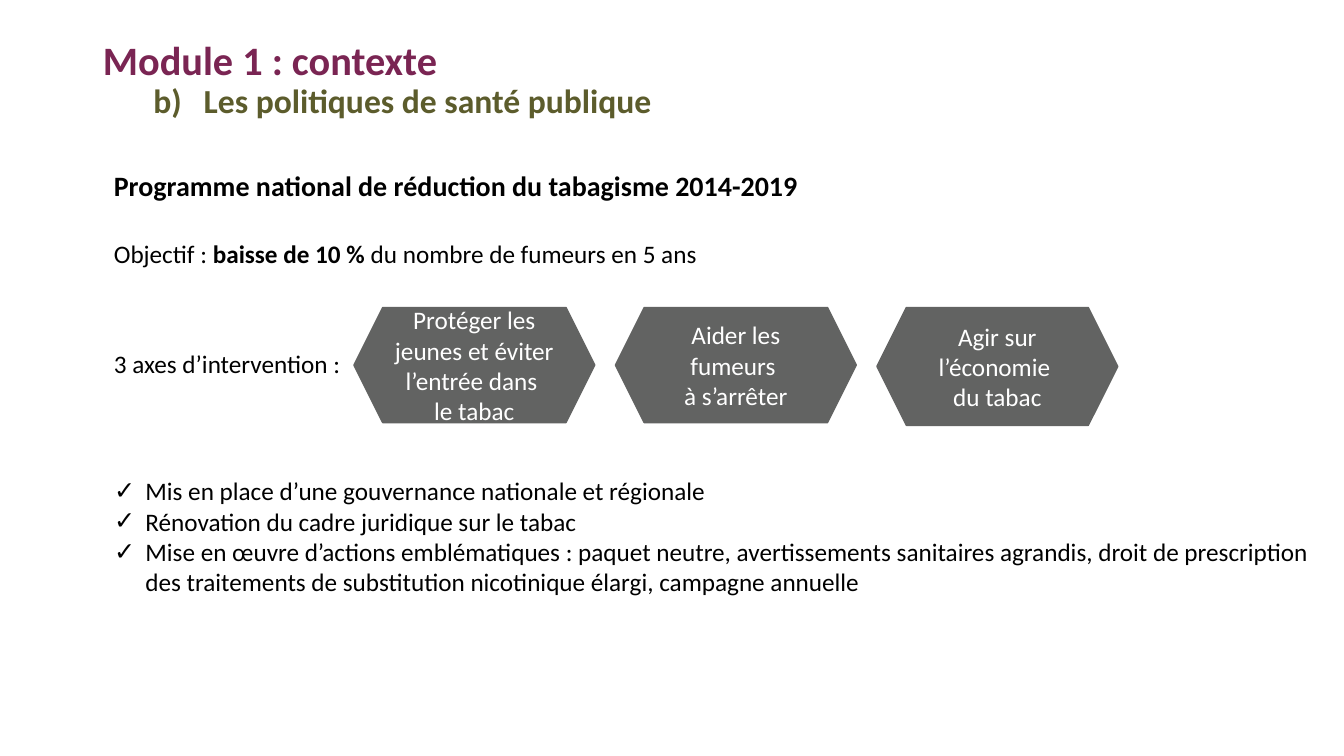
from dataclasses import dataclass

from lxml import etree
from pptx import Presentation
from pptx import util as u
from pptx.dml.color import RGBColor
from pptx.enum import shapes, text
from pptx.oxml import ns

TITLE = "Module 1 : contexte"
SUBTITLE = "Les politiques de santé publique"
PROGRAMME = "Programme national de réduction du tabagisme 2014-2019"
OBJECTIVE = [
    ("Objectif : ", False),
    ("baisse de 10 % ", True),
    ("du nombre de fumeurs en 5 ans", False),
]
AXES_LABEL = "3 axes d’intervention :"
AXES = [  # wording, height in cm
    ("Protéger les jeunes et éviter l’entrée dans \vle tabac", 2.9),
    ("Aider les fumeurs \và s’arrêter", 2.9),
    ("Agir sur l’économie \vdu tabac", 2.97),
]
ACTIONS = [
    "Mis en place d’une gouvernance nationale et régionale",
    "Rénovation du cadre juridique sur le tabac",
    "Mise en œuvre d’actions emblématiques : paquet neutre, avertissements "
    "sanitaires agrandis, droit de prescription des traitements de "
    "substitution nicotinique élargi, campagne annuelle",
]


@dataclass(frozen=True)
class Theme:
    font: str = "Calibri"
    plum: str = "7A2553"
    olive: str = "5C5C2C"
    grey: str = "626362"
    black: str = "000000"
    white: str = "FFFFFF"
    title: float = 28.8
    subtitle: float = 24
    heading: float = 20
    body: float = 18


THEME = Theme()
LEFT = 2.62
AXIS_LEFT, AXIS_TOP, AXIS_WIDTH, AXIS_STEP = 8.92, 7.75, 6.07, 6.59


def place(shape, left, top, width, height):
    shape.left, shape.top = u.Cm(left), u.Cm(top)
    shape.width, shape.height = u.Cm(width), u.Cm(height)


def write(shape, paragraphs, size, color, bold=False, align=text.PP_ALIGN.LEFT,
          anchor=text.MSO_ANCHOR.TOP, spacing=1.0):
    """Fill a shape; a paragraph is a string or a list of (words, bold) pairs."""
    frame = shape.text_frame
    frame.word_wrap = True
    frame.auto_size = text.MSO_AUTO_SIZE.NONE
    frame.vertical_anchor = anchor
    for index, content in enumerate(paragraphs):
        para = frame.add_paragraph() if index else frame.paragraphs[0]
        para.alignment = align
        para.line_spacing = spacing
        para.space_before = para.space_after = u.Pt(0)
        if isinstance(content, str):
            para.text = content
            weights = [bold] * len(para.runs)
        else:
            for words, _ in content:
                para.add_run().text = words
            weights = [weight for _, weight in content]
        for span, weight in zip(para.runs, weights):
            span.font.name = THEME.font
            span.font.size = u.Pt(size)
            span.font.bold = weight
            span.font.color.rgb = RGBColor.from_string(color)


def add_marker(para, margin, hanging, tag, **attributes):
    """Give a paragraph a bullet or number with a hanging indent in cm."""
    props = para._p.get_or_add_pPr()
    props.set("marL", str(u.Cm(margin)))
    props.set("indent", str(-u.Cm(hanging)))
    marker = etree.SubElement(props, ns.qn(tag))
    for name, value in attributes.items():
        marker.set(name, value)


def add_text(page, box, paragraphs, size, **style):
    label = page.shapes.add_textbox(*map(u.Cm, box))
    write(label, paragraphs, size, THEME.black, **style)


def add_axis(page, index, words, height):
    left = AXIS_LEFT + index * AXIS_STEP
    hexagon = page.shapes.add_shape(
        shapes.MSO_SHAPE.HEXAGON,
        *map(u.Cm, (left, AXIS_TOP, AXIS_WIDTH, height)))
    hexagon.shadow.inherit = False
    hexagon.fill.solid()
    hexagon.fill.fore_color.rgb = RGBColor.from_string(THEME.grey)
    hexagon.line.color.rgb = RGBColor.from_string(THEME.grey)
    hexagon.line.width = u.Pt(1)
    write(hexagon, [words], THEME.body, THEME.white,
          align=text.PP_ALIGN.CENTER, anchor=text.MSO_ANCHOR.MIDDLE)


def main():
    deck = Presentation()
    deck.slide_width, deck.slide_height = u.Cm(33.87), u.Cm(19.05)
    page = deck.slides.add_slide(deck.slide_layouts.get_by_name("Two Content"))
    title, subtitle, actions = list(page.placeholders)[:3]

    place(title, 2.34, 1.02, 29.21, 1.24)
    write(title, [TITLE], THEME.title, THEME.plum, bold=True,
          anchor=text.MSO_ANCHOR.MIDDLE, spacing=0.7)

    place(subtitle, LEFT, 2, 29.21, 1.8)
    write(subtitle, [SUBTITLE], THEME.subtitle, THEME.olive, bold=True, spacing=0.9)
    add_marker(subtitle.text_frame.paragraphs[0], 2.26, 1.27,
               "a:buAutoNum", type="alphaLcParenR", startAt="2")

    add_text(page, (LEFT, 4.11, 29.36, 1.12), [PROGRAMME], THEME.heading, bold=True)
    add_text(page, (LEFT, 5.87, 28.32, 1.02), [OBJECTIVE], THEME.body)
    add_text(page, (LEFT, 8.66, 6.83, 1.02), [AXES_LABEL], THEME.body)
    for index, (words, height) in enumerate(AXES):
        add_axis(page, index, words, height)

    place(actions, LEFT, 11.86, 30.81, 3.33)
    write(actions, ACTIONS, THEME.body, THEME.black)
    for para in actions.text_frame.paragraphs:
        add_marker(para, 0.79, 0.79, "a:buChar", char="✓")

    deck.save("out.pptx")


if __name__ == "__main__":
    main()
